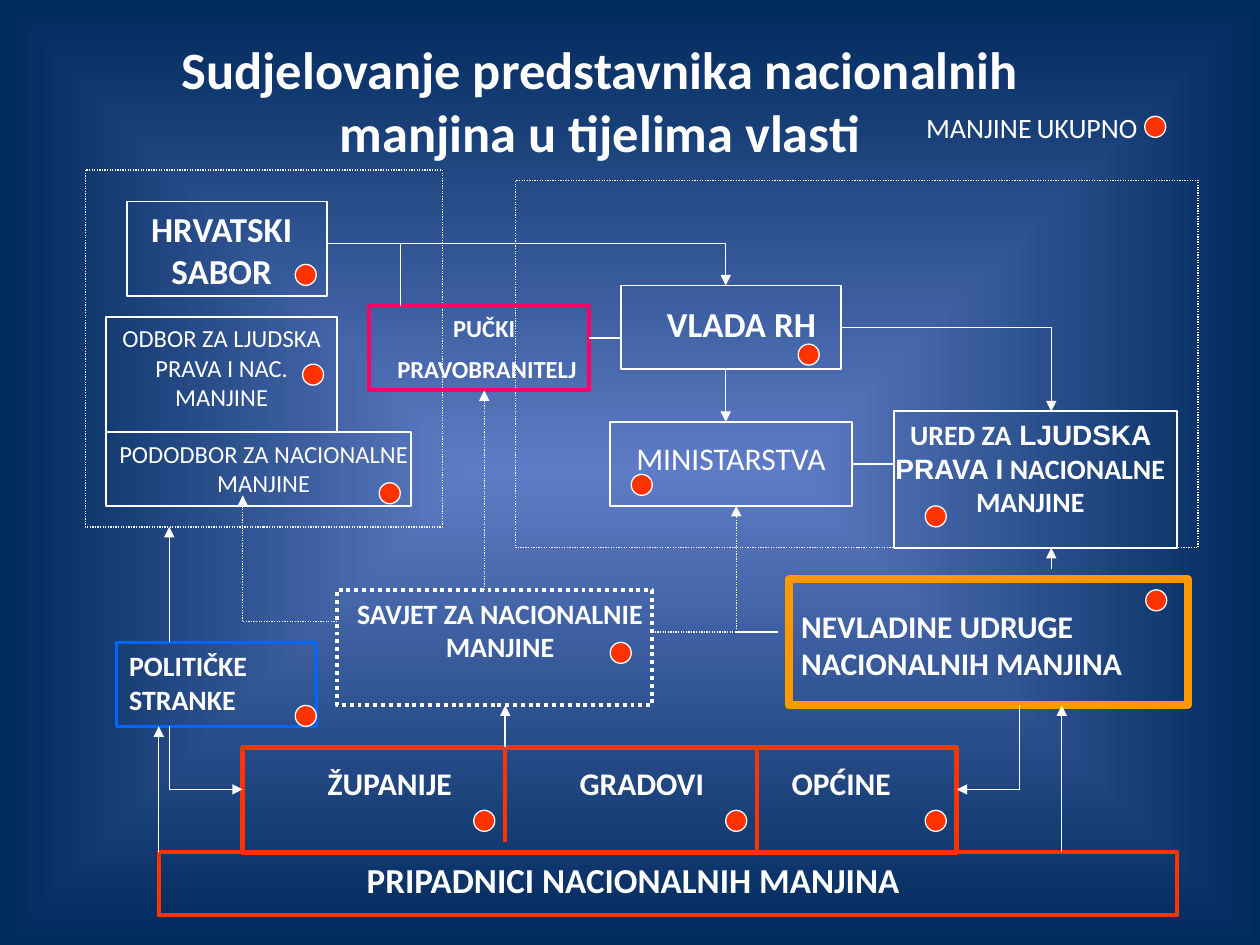
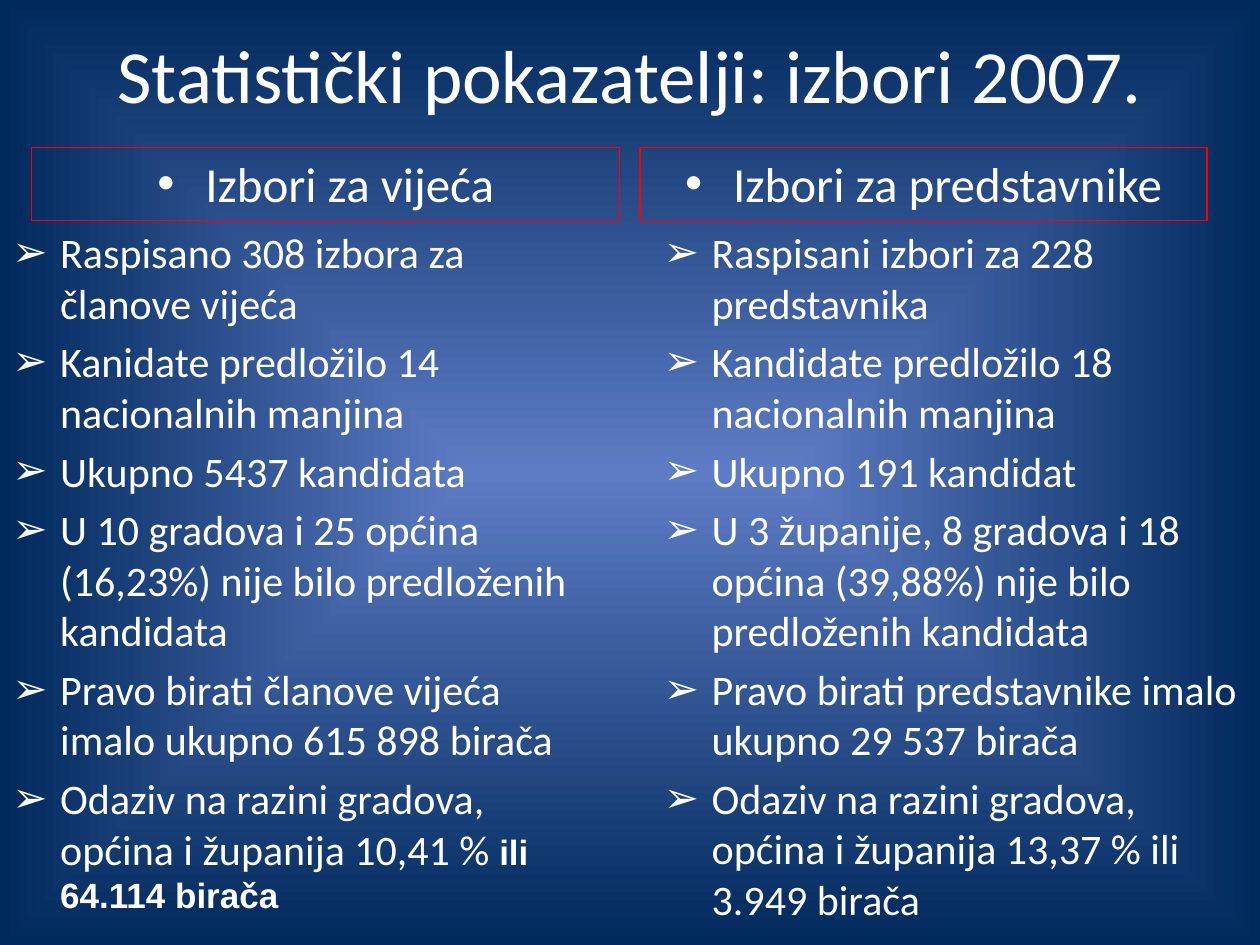
from itertools import pairwise

from lxml import etree
from pptx import Presentation
from pptx.dml.color import RGBColor
from pptx.enum.dml import MSO_LINE
from pptx.enum.shapes import MSO_CONNECTOR, MSO_SHAPE
from pptx.enum.text import MSO_ANCHOR, PP_ALIGN
from pptx.oxml import parse_xml
from pptx.oxml.ns import nsdecls, qn
from pptx.util import Inches, Pt

RECT, OVAL = MSO_SHAPE.RECTANGLE, MSO_SHAPE.OVAL
STRAIGHT = MSO_CONNECTOR.STRAIGHT
DOTTED = MSO_LINE.ROUND_DOT
LEFT, CENTER = PP_ALIGN.LEFT, PP_ALIGN.CENTER
TOP, MIDDLE = MSO_ANCHOR.TOP, MSO_ANCHOR.MIDDLE

WHITE = RGBColor(0xFF, 0xFF, 0xFF)
ORANGE_RED = RGBColor(0xFF, 0x33, 0x00)
RED = RGBColor(0xFF, 0x00, 0x00)
BLUE = RGBColor(0x00, 0x66, 0xFF)
AMBER = RGBColor(0xFF, 0x99, 0x00)
PINK = RGBColor(0xFF, 0x00, 0x66)
GLOW = RGBColor(0x5E, 0x7C, 0xC5)
NAVY = RGBColor(0x00, 0x29, 0x5C)

FONT, ALT_FONT = "Calibri", "Arial"
WIDTH, HEIGHT = 10, 7.5
UNIT = 1 / 12  # diagram grid step, inches
GRID_LEFT, GRID_TOP = 0.01, 0.015
DOT_SIZE = 2

# Diagram: every place is (column, row, columns, rows) on the grid.
# A paragraph is a string or a list of (text, run format) pairs.
LABELS = [
    # place, paragraphs, size, bold, alignment
    ((8.2, 2.8, 97.7, 13.3),
     ["Sudjelovanje predstavnika nacionalnih manjina u tijelima vlasti"], 30, True, CENTER),
    ((9, 19, 24, 9), ["HRVATSKI SABOR"], 20, True, CENTER),
    ((58, 28, 25, 5), ["VLADA RH"], 20, True, CENTER),
    ((9, 30, 24, 10), ["ODBOR ZA LJUDSKA PRAVA I NAC. MANJINE"], 14, False, CENTER),
    ((51, 41, 37, 5), ["MINISTARSTVA"], 18, False, CENTER),
    ((10, 41, 30, 7), ["PODODBOR ZA NACIONALNE MANJINE"], 14, False, CENTER),
    ((82, 39, 32, 11),
     [[("URED ZA", {}), (" LJUDSKA PRAVA I", {"font": ALT_FONT}), (" NACIONALNE MANJINE", {})]],
     16, True, CENTER),
    ((12.7, 81, 95, 5), ["PRIPADNICI NACIONALNIH MANJINA"], 20, True, CENTER),
    ((31, 56, 33, 8), ["SAVJET ZA NACIONALNIE MANJINE"], 16, True, CENTER),
    ((29, 72, 16, 5), ["ŽUPANIJE"], 18, True, CENTER),
    ((53, 72, 16, 5), ["GRADOVI"], 18, True, CENTER),
    ((72, 72, 16, 5), ["OPĆINE"], 18, True, CENTER),
    ((11, 61, 19, 8), ["POLITIČKE STRANKE"], 16, True, LEFT),
    ((75, 57, 40, 8), ["NEVLADINE UDRUGE NACIONALNIH MANJINA"], 18, True, LEFT),
    ((86.9, 9.8, 25.3, 4.5),
     [[("MANJINE", {}), (" ", {"size": 12}), ("UKUPNO", {})]], 16, False, LEFT),
    ((33, 29, 26, 8), ["PUČKI", " PRAVOBRANITELJ"], 14, True, CENTER),
]

FRAMES = [
    # place, colour, line width, dash
    ((12, 19, 19, 9), WHITE, 1, None),
    ((59, 27, 21, 8), WHITE, 1, None),
    ((10, 30, 22, 11), WHITE, 1, None),
    ((58, 40, 23, 8), WHITE, 1, None),
    ((10, 41, 29, 7), WHITE, 1, None),
    ((85, 39, 27, 13), WHITE, 1, None),
    ((15, 81, 97, 6), ORANGE_RED, 2.25, None),
    ((8, 16, 34, 34), WHITE, 0.75, DOTTED),
    ((49, 17, 65, 35), WHITE, 0.75, DOTTED),
    ((32, 56, 30, 11), WHITE, 2.25, DOTTED),
    ((23, 71, 68, 10), ORANGE_RED, 3, None),
    ((11, 61, 19, 8), BLUE, 1.5, None),
    ((75, 55, 38, 12), AMBER, 4.5, None),
    ((35, 29, 21, 8), PINK, 2.25, None),
]

ARROWS = [
    # route, line width, dash
    ([(31, 23), (69, 23), (69, 27)], 0.75, None),
    ([(69, 35), (69, 40)], 0.75, None),
    ([(80, 31), (100, 31), (100, 39)], 0.75, None),
    ([(32, 59), (23, 59), (23, 47)], 0.75, DOTTED),
    ([(62, 60), (70, 60), (70, 48)], 0.75, DOTTED),
    ([(46, 56), (46, 37)], 0.75, DOTTED),
    ([(16, 61), (16, 50)], 0.75, None),
    ([(16, 69), (16, 75), (23, 75)], 0.75, None),
    ([(15, 81), (15, 69)], 0.75, None),
    ([(100, 54), (100, 52)], 0.75, None),
    ([(101, 81), (101, 67)], 0.75, None),
    ([(97, 67), (97, 75), (91, 75)], 0.75, None),
    ([(48, 71), (48, 67)], 1, None),
]

LINKS = [
    # route, colour, line width
    ([(81, 44), (85, 44)], WHITE, 0.75),
    ([(70, 60), (74, 60)], WHITE, 0.75),
    ([(38, 29), (38, 23)], WHITE, 0.75),
    ([(56, 32), (59, 32)], WHITE, 0.75),
    ([(48, 71), (48, 80)], ORANGE_RED, 2.25),
    ([(72, 71), (72, 81)], ORANGE_RED, 2.25),
]

MINORITY_DOTS = [
    (28, 25), (28.7, 34.5), (36, 45.8), (28, 67), (58, 61), (109, 56), (45, 77),
    (69, 77), (88, 77), (108.9, 10.9), (60, 45), (88, 48), (75.9, 32.6),
]

# Statistics: places are (left, top, width, height) in inches.
STATS_TITLE = "Statistički pokazatelji: izbori 2007."
STATS_COLUMNS = [
    {
        "heading": "Izbori za vijeća",
        "heading_place": (0.25, 1.17, 4.67, 0.58),
        "list_place": (0, 1.75, 4.83, 5.58),
        "points": [
            "Raspisano 308 izbora za članove vijeća",
            "Kanidate predložilo 14 nacionalnih manjina",
            "Ukupno 5437 kandidata",
            "U 10 gradova i 25 općina (16,23%) nije bilo predloženih kandidata",
            "Pravo birati članove vijeća imalo ukupno 615 898 birača",
            [("Odaziv na razini gradova, općina i županija 10,41 % ", {}),
             ("ili 64.114 birača", {"size": 20, "font": ALT_FONT, "bold": True})],
        ],
    },
    {
        "heading": "Izbori za predstavnike",
        "heading_place": (5.08, 1.17, 4.5, 0.58),
        "list_place": (5.17, 1.75, 4.83, 5.5),
        "points": [
            "Raspisani izbori za 228 predstavnika",
            "Kandidate predložilo 18 nacionalnih manjina",
            "Ukupno 191 kandidat",
            "U 3 županije, 8 gradova i 18 općina (39,88%) nije bilo predloženih kandidata",
            "Pravo birati predstavnike imalo ukupno 29 537 birača",
            "Odaziv na razini gradova, općina i županija 13,37 % ili 3.949 birača",
        ],
    },
]


def grid_point(col, row):
    return GRID_LEFT + col * UNIT, GRID_TOP + row * UNIT


def grid_place(col, row, cols, rows):
    return *grid_point(col, row), cols * UNIT, rows * UNIT


def inches(values):
    return [Inches(value) for value in values]


def add_slide(deck):
    """Add a blank slide with the glowing blue background."""
    slide = deck.slides.add_slide(deck.slide_layouts[6])
    background = parse_xml(
        f'<p:bg {nsdecls("p", "a")}><p:bgPr><a:gradFill><a:gsLst>'
        f'<a:gs pos="0"><a:srgbClr val="{GLOW}"/></a:gs>'
        f'<a:gs pos="100000"><a:srgbClr val="{NAVY}"/></a:gs></a:gsLst>'
        '<a:path path="shape"><a:fillToRect l="50000" t="50000" r="50000" b="50000"/></a:path>'
        '</a:gradFill><a:effectLst/></p:bgPr></p:bg>')
    slide.element.cSld.insert(0, background)
    return slide


def set_bullet(paragraph, symbol):
    props = paragraph._p.get_or_add_pPr()
    props.set("marL", str(Inches(0.38)))
    props.set("indent", str(-Inches(0.38)))
    etree.SubElement(props, qn("a:buFont")).set("typeface", ALT_FONT)
    etree.SubElement(props, qn("a:buChar")).set("char", symbol)


def write(shape, paragraphs, size, bold=False, align=LEFT, anchor=TOP, gap=0.5, bullet=None):
    """Fill a shape with paragraphs; gap is a share of the text size."""
    frame = shape.text_frame
    frame.word_wrap = True
    frame.vertical_anchor = anchor
    for index, content in enumerate(paragraphs):
        paragraph = frame.add_paragraph() if index else frame.paragraphs[0]
        paragraph.alignment = align
        if index:
            paragraph.space_before = Pt(gap * size)
        if bullet:
            set_bullet(paragraph, bullet)
        for text, style in [(content, {})] if isinstance(content, str) else content:
            run = paragraph.add_run()
            run.text = text
            run.font.name = style.get("font", FONT)
            run.font.size = Pt(style.get("size", size))
            run.font.bold = style.get("bold", bold)
            run.font.color.rgb = WHITE


def add_text(slide, place, paragraphs, size, **options):
    write(slide.shapes.add_textbox(*inches(place)), paragraphs, size, **options)


def style_line(line, color, width, dash=None):
    line.color.rgb = color
    line.width = Pt(width)
    if dash:
        line.dash_style = dash


def add_outlined(slide, kind, place, color, width, dash=None, fill=None):
    shape = slide.shapes.add_shape(kind, *inches(place))
    shape.shadow.inherit = False
    if fill:
        shape.fill.solid()
        shape.fill.fore_color.rgb = fill
    else:
        shape.fill.background()
    style_line(shape.line, color, width, dash)
    return shape


def add_route(slide, route, color, width, dash=None, arrow=False):
    """Join grid points by straight connectors, with an arrowhead at the end if asked."""
    for start, end in pairwise(route):
        connector = slide.shapes.add_connector(
            STRAIGHT, *inches(grid_point(*start) + grid_point(*end)))
        style_line(connector.line, color, width, dash)
        etree.SubElement(connector._element.spPr, qn("a:effectLst"))
    if arrow:
        line = connector.line._get_or_add_ln()
        etree.SubElement(line, qn("a:tailEnd")).set("type", "triangle")


def build_diagram(deck):
    slide = add_slide(deck)
    for place, paragraphs, size, bold, align in LABELS:
        add_text(slide, grid_place(*place), paragraphs, size, bold=bold, align=align)
    for place, color, width, dash in FRAMES:
        add_outlined(slide, RECT, grid_place(*place), color, width, dash)
    for route, width, dash in ARROWS:
        add_route(slide, route, WHITE, width, dash, arrow=True)
    for route, color, width in LINKS:
        add_route(slide, route, color, width)
    for col, row in MINORITY_DOTS:
        add_outlined(slide, OVAL, grid_place(col, row, DOT_SIZE, DOT_SIZE),
                     WHITE, 0.75, fill=ORANGE_RED)


def build_statistics(deck):
    slide = add_slide(deck)
    add_text(slide, (0.5, 0.08, 9, 1), [STATS_TITLE], 42.9, align=CENTER, anchor=MIDDLE)
    for column in STATS_COLUMNS:
        heading = add_outlined(slide, RECT, column["heading_place"], RED, 0.75)
        write(heading, [column["heading"]], 28, align=CENTER, bullet="•")
        add_text(slide, column["list_place"], column["points"], 24, gap=0.2, bullet="➢")


def main():
    deck = Presentation()
    deck.slide_width, deck.slide_height = inches((WIDTH, HEIGHT))
    build_diagram(deck)
    build_statistics(deck)
    deck.save("out.pptx")


if __name__ == "__main__":
    main()
